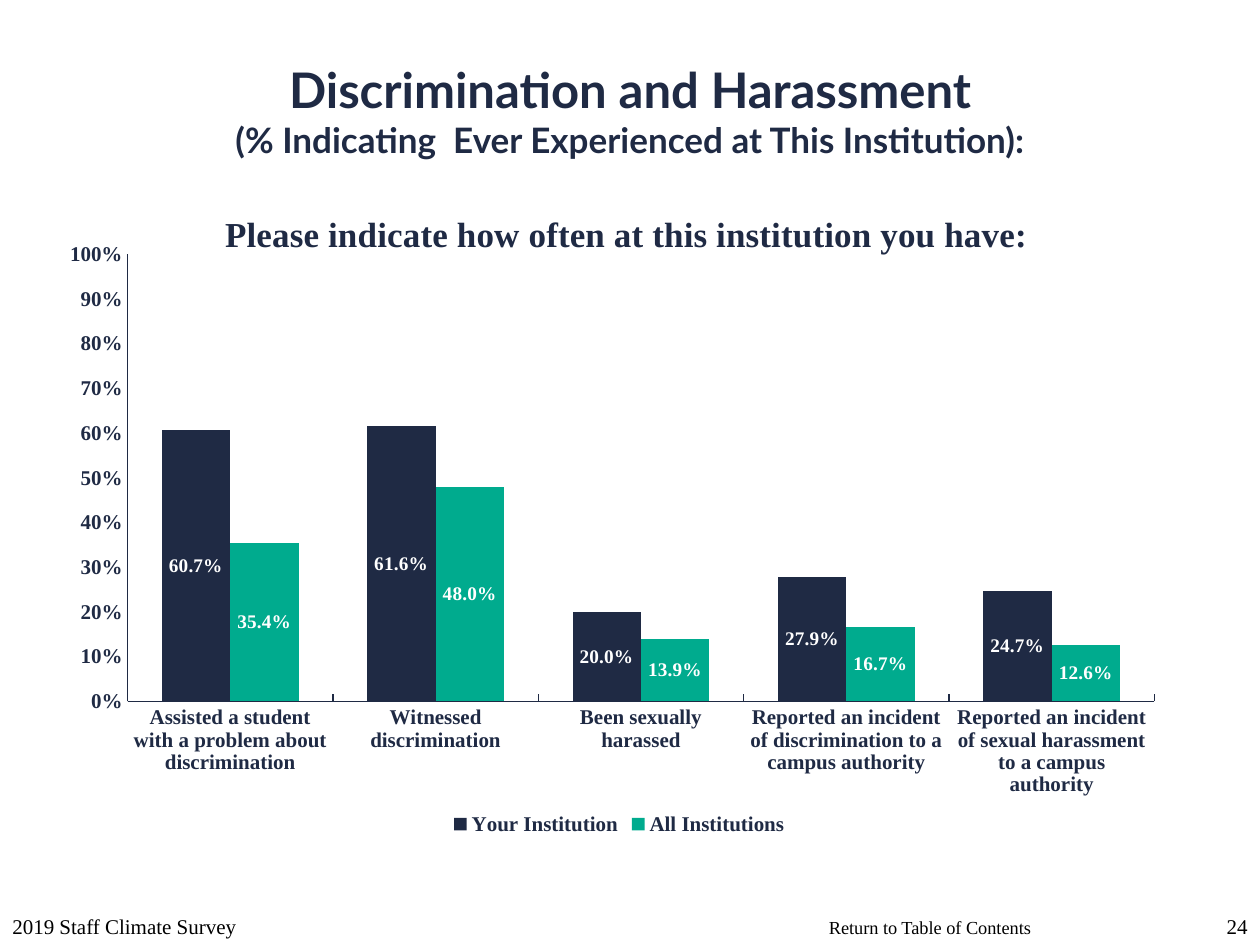
import pptx
import pptx.util
import pptx.chart.data
import pptx.dml.color
import pptx.enum.chart
import pptx.enum.text
import pptx.oxml
import pptx.oxml.ns

Inches = pptx.util.Inches
Chart = pptx.enum.chart
Align = pptx.enum.text.PP_ALIGN
Anchor = pptx.enum.text.MSO_ANCHOR

# Content
HUES = {"navy": "1F2A44", "green": "00AB8E", "white": "FFFFFF", "black": "000000"}
SERIF = "Times New Roman"
TITLE = [
    ("Discrimination and Harassment", 28),
    ("(% Indicating  Ever Experienced at This Institution):", 20),
]
ASK = "Please indicate how often at this institution you have:"
CATS = [
    "Assisted a student with a problem about discrimination",
    "Witnessed discrimination",
    "Been sexually harassed",
    "Reported an incident of discrimination to a campus authority",
    "Reported an incident of sexual harassment to a campus authority",
]
SERIES = [
    ("Your Institution", "navy", [0.607, 0.616, 0.2, 0.279, 0.247]),
    ("All Institutions", "green", [0.354, 0.48, 0.139, 0.167, 0.126]),
]
# Text, box, size, alignment, anchor, wrap
NOTES = [
    ("Return to Table of Contents", (6.48, 7.22, 1.82, 0.28), 10.5,
     Align.LEFT, Anchor.TOP, False),
    ("2019 Staff Climate Survey", (0, 7, 3.17, 0.5), 12,
     Align.LEFT, Anchor.BOTTOM, True),
    ("24", (9.5, 7, 0.5, 0.5), 12, Align.RIGHT, Anchor.BOTTOM, True),
]


def paint(hue):
    return pptx.dml.color.RGBColor.from_string(HUES[hue])


def assign(item, **vals):
    for key, val in vals.items():
        setattr(item, key, val)


def style(font, size, hue="navy", name=SERIF, bold=True):
    assign(font, size=pptx.util.Pt(size), name=name, bold=bold)
    font.color.rgb = paint(hue)


def lay_out(part, index, **vals):
    """Give a chart part a manual layout, in fractions of the chart."""
    for old in part.findall(pptx.oxml.ns.qn("c:layout")):
        part.remove(old)
    tags = "".join(f'<c:{key} val="{val}"/>' for key, val in vals.items())
    part.insert(index, pptx.oxml.parse_xml(
        f'<c:layout {pptx.oxml.ns.nsdecls("c")}>'
        f"<c:manualLayout>{tags}</c:manualLayout></c:layout>"))


deck = pptx.Presentation()
assign(deck, slide_width=Inches(10), slide_height=Inches(7.5))
slide = deck.slides.add_slide(deck.slide_layouts[5])

# Title
title = slide.shapes.title
assign(title, left=Inches(0), top=Inches(0.25),
       width=Inches(10), height=Inches(1.25))
assign(title.text_frame, vertical_anchor=Anchor.MIDDLE,
       auto_size=pptx.enum.text.MSO_AUTO_SIZE.NONE)
para = title.text_frame.paragraphs[0]
para.alignment = Align.CENTER
for i, (text, size) in enumerate(TITLE):
    if i:
        para.add_line_break()
    run = para.add_run()
    run.text = text
    style(run.font, size, name="Lato")

# Chart
data = pptx.chart.data.CategoryChartData(number_format="0.0%")
data.categories = CATS
for name, hue, vals in SERIES:
    data.add_series(name, vals)
chart = slide.shapes.add_chart(
    Chart.XL_CHART_TYPE.COLUMN_CLUSTERED,
    *map(Inches, (0.5, 1.42, 8.83, 5.25)), data).chart
style(chart.font, 10)

# Chart title and plot area
head = chart.chart_title
head.text_frame.text = ASK
style(head.text_frame.paragraphs[0].runs[0].font, 20)
head.include_in_layout = False
lay_out(head._element, 1, xMode="edge", yMode="edge", x=0.14, y=0.04)
lay_out(chart._chartSpace.chart.plotArea, 0, layoutTarget="inner",
        xMode="edge", yMode="edge", x=0.058, y=0.114, w=0.923, h=0.676)

# Columns and their labels
plot = chart.plots[0]
assign(plot, gap_width=100, overlap=0, vary_by_categories=False)
for bars, (name, hue, vals) in zip(plot.series, SERIES):
    bars.format.fill.solid()
    bars.format.fill.fore_color.rgb = paint(hue)
    tags = bars.data_labels
    assign(tags, show_value=True, number_format="0.0%",
           number_format_is_linked=False,
           position=Chart.XL_LABEL_POSITION.CENTER)
    style(tags.font, 11, "white")

# Axes
Tick = Chart.XL_TICK_MARK
for axis, tick in ((chart.category_axis, Tick.INSIDE), (chart.value_axis, Tick.NONE)):
    assign(axis, has_major_gridlines=False, major_tick_mark=tick,
           minor_tick_mark=Tick.NONE)
    style(axis.tick_labels.font, 12)
    axis.format.line.color.rgb = paint("navy")
    axis.format.line.width = pptx.util.Pt(0.75)
assign(chart.value_axis, minimum_scale=0, maximum_scale=1, major_unit=0.1)
assign(chart.value_axis.tick_labels, number_format="0%",
       number_format_is_linked=False)

# Legend
chart.has_legend = True
assign(chart.legend, include_in_layout=False,
       position=Chart.XL_LEGEND_POSITION.BOTTOM)
style(chart.legend.font, 12)

# Footer
for text, box, size, align, anchor, wrap in NOTES:
    frame = slide.shapes.add_textbox(*map(Inches, box)).text_frame
    assign(frame, text=text, word_wrap=wrap, vertical_anchor=anchor)
    para = frame.paragraphs[0]
    para.alignment = align
    style(para.runs[0].font, size, "black", bold=False)

deck.save("out.pptx")
